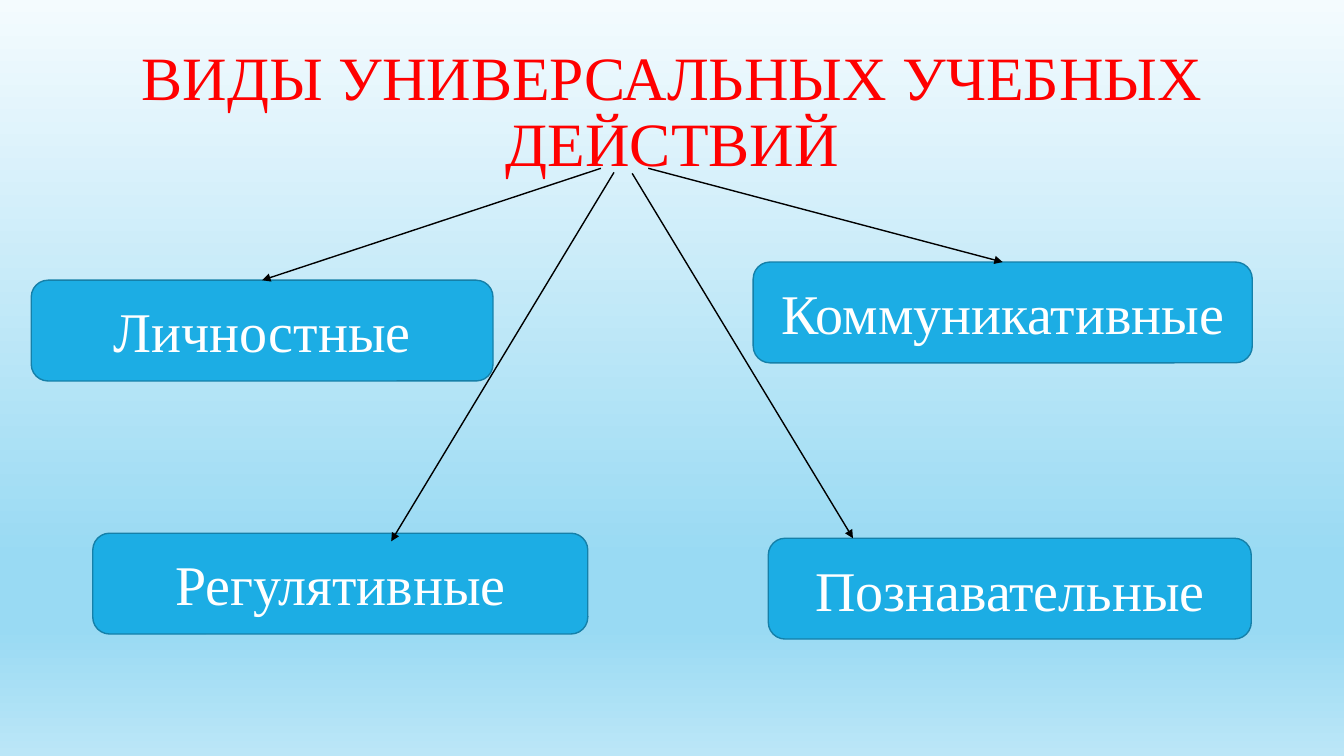
from lxml.etree import SubElement
from pptx import Presentation
from pptx.dml.color import RGBColor
from pptx.enum.shapes import MSO_CONNECTOR, MSO_SHAPE
from pptx.enum.text import MSO_ANCHOR, PP_ALIGN
from pptx.oxml.ns import qn
from pptx.util import Inches, Pt

RED = RGBColor(0xFF, 0x00, 0x00)
WHITE = RGBColor(0xFF, 0xFF, 0xFF)
BLACK = RGBColor(0x00, 0x00, 0x00)
BLUE = RGBColor(0x1C, 0xAD, 0xE4)
DARK_BLUE = RGBColor(0x15, 0x80, 0xA9)
SKY = [
    (0, RGBColor(0xF4, 0xFB, 0xFE)),
    (74, RGBColor(0x99, 0xDA, 0xF3)),
    (83, RGBColor(0x99, 0xDA, 0xF3)),
    (100, RGBColor(0xBB, 0xE6, 0xF7)),
]

WIDTH, HEIGHT = 13.33, 7.5
TITLE = "ВИДЫ УНИВЕРСАЛЬНЫХ УЧЕБНЫХ ДЕЙСТВИЙ"
TITLE_AREA = (0.92, 0.4, 11.5, 1.45)
CARD_HEIGHT = 1
TOP_SITE = 0
CARDS = [
    {"label": "Личностные", "place": (0.31, 2.78, 4.58), "start": (5.96, 1.67), "end": None},
    {"label": "Регулятивные", "place": (0.92, 5.29, 4.91), "start": (6.09, 1.71), "end": (3.88, 5.37)},
    {"label": "Познавательные", "place": (7.62, 5.34, 4.79), "start": (6.27, 1.72), "end": (8.46, 5.34)},
    {"label": "Коммуникативные", "place": (7.47, 2.6, 4.95), "start": (6.43, 1.67), "end": None},
]
TITLE_FONT = {"name": "Times New Roman", "size": Pt(44)}
CARD_FONT = {"name": "Times New Roman", "size": Pt(40)}
FRAME_FORMAT = {"word_wrap": True, "vertical_anchor": MSO_ANCHOR.MIDDLE}


def apply(target, values):
    for name, value in values.items():
        setattr(target, name, value)


def paint_background(page):
    fill = page.background.fill
    fill.gradient()
    fill.gradient_angle = 270
    stops = next(page.background._cSld.iter(qn("a:gsLst")))
    for stop in list(stops):
        stops.remove(stop)
    for share, color in SKY:
        stop = SubElement(stops, qn("a:gs"), pos=str(share * 1000))
        SubElement(stop, qn("a:srgbClr"), val=str(color))


def write(box, text, font, color, spacing=1.0):
    apply(box.text_frame, FRAME_FORMAT)
    para = box.text_frame.paragraphs[0]
    apply(para, {"alignment": PP_ALIGN.CENTER, "line_spacing": spacing})
    span = para.add_run()
    span.text = text
    apply(span.font, font)
    span.font.color.rgb = color


def add_card(page, label, place):
    left, top, width = place
    card = page.shapes.add_shape(
        MSO_SHAPE.ROUNDED_RECTANGLE, *map(Inches, (left, top, width, CARD_HEIGHT)))
    card.shadow.inherit = False
    card.fill.solid()
    card.fill.fore_color.rgb = BLUE
    card.line.color.rgb = DARK_BLUE
    card.line.width = Pt(1)
    write(card, label, CARD_FONT, WHITE)
    return card


def add_arrow(page, card, start, end):
    finish = end or start
    arrow = page.shapes.add_connector(
        MSO_CONNECTOR.STRAIGHT, *map(Inches, (*start, *finish)))
    if end is None:
        arrow.end_connect(card, TOP_SITE)
    arrow.line.color.rgb = BLACK
    arrow.line.width = Pt(1)
    SubElement(arrow.line._get_or_add_ln(), qn("a:tailEnd"), type="triangle")
    SubElement(arrow._element.spPr, qn("a:effectLst"))


def main():
    """Build the slide on the four kinds of universal learning actions."""
    deck = Presentation()
    apply(deck, {"slide_width": Inches(WIDTH), "slide_height": Inches(HEIGHT)})
    page = deck.slides.add_slide(deck.slide_layouts[6])
    paint_background(page)
    title = page.shapes.add_textbox(*map(Inches, TITLE_AREA))
    write(title, TITLE, TITLE_FONT, RED, 0.9)
    cards = [add_card(page, item["label"], item["place"]) for item in CARDS]
    for card, item in zip(cards, CARDS):
        add_arrow(page, card, item["start"], item["end"])
    deck.save("out.pptx")


if __name__ == "__main__":
    main()
